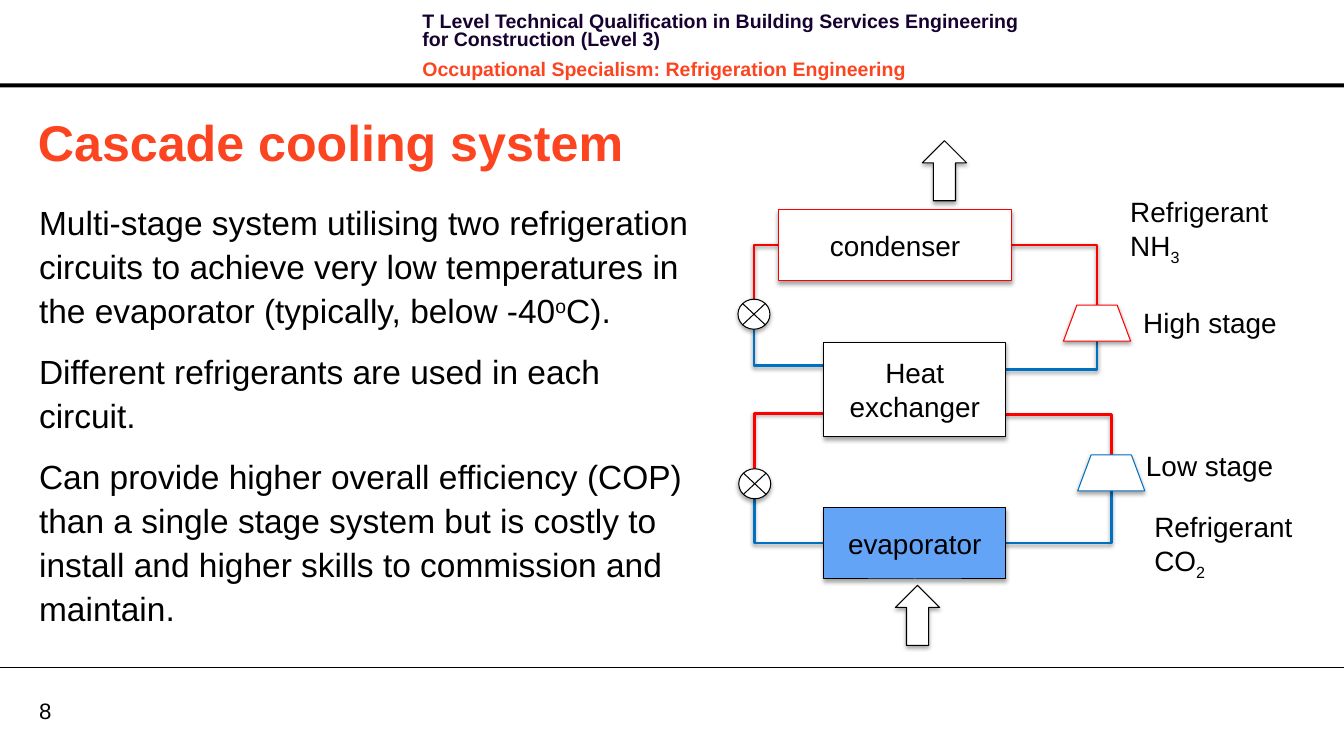
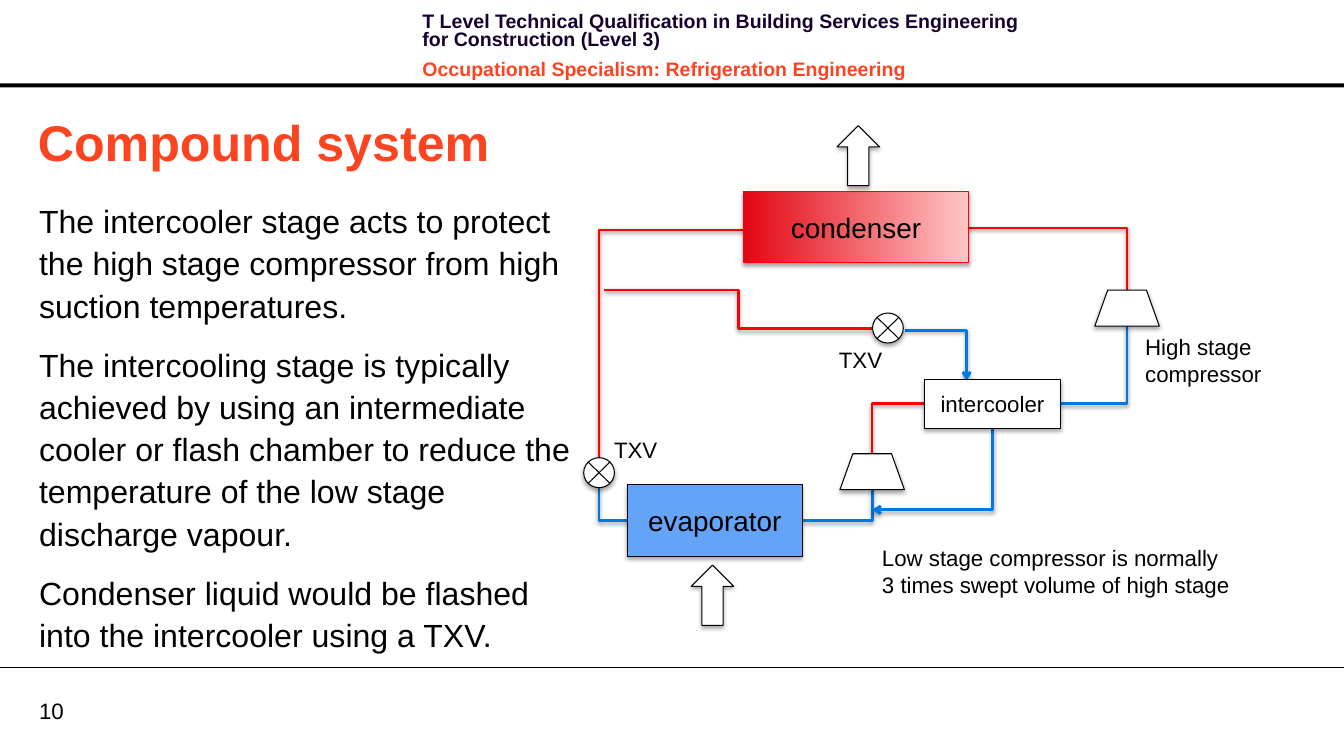
import dataclasses
import typing

import lxml.etree
import pptx
import pptx.dml.color
import pptx.enum.shapes
import pptx.enum.text
import pptx.oxml.ns
import pptx.util

Cm = pptx.util.Cm
Pt = pptx.util.Pt
KIND = pptx.enum.shapes.MSO_SHAPE
LINK = pptx.enum.shapes.MSO_CONNECTOR
MIDDLE = pptx.enum.text.MSO_ANCHOR.MIDDLE
CENTER = pptx.enum.text.PP_ALIGN.CENTER

WIDTH, HEIGHT = 34.01, 19
BLACK, WHITE, NAVY, ORANGE = "000000", "FFFFFF", "170130", "FC4421"
RED, BLUE, AZURE, SKY = "FF0000", "0070C0", "0077E3", "63A4F7"
GLOW = ("E30613", "FFC5C5")
FLUSH = {"margin_left": 0, "margin_right": 0, "margin_top": 0, "margin_bottom": 0}
SIZES = {
    KIND.UP_ARROW: (1.12, 1.52),
    KIND.FLOWCHART_MANUAL_OPERATION: (1.7, 0.91),
    KIND.FLOWCHART_SUMMING_JUNCTION: (0.81, 0.76),
}


class Area(typing.NamedTuple):
    left: float
    top: float
    width: float
    height: float


class Run(typing.NamedTuple):
    text: str
    base: int = 0


class Para(typing.NamedTuple):
    runs: tuple[Run, ...]
    color: str = BLACK


@dataclasses.dataclass
class Box:
    text: str
    area: Area
    fill: tuple[str, ...] = (WHITE,)
    line: str = BLACK
    size: int = 20


@dataclasses.dataclass
class Symbol:
    """A fixed-size sign, placed by its centre line and its top."""
    kind: KIND
    center: float
    top: float
    line: str = BLACK


@dataclasses.dataclass
class Pipe:
    """An elbow that leaves its start sideways."""
    start: tuple[float, float]
    end: tuple[float, float]
    color: str
    head: str = ""
    bends: int = 1


@dataclasses.dataclass
class Label:
    area: Area
    paras: list[Para]
    size: int = 16
    wrap: bool = True


@dataclasses.dataclass
class Page:
    number: int
    title: str
    body: Label
    scale: float
    pipes: list[Pipe]
    boxes: list[Box]
    symbols: list[Symbol]
    labels: list[Label]


def plain(text: str, color: str = BLACK) -> Para:
    return Para((Run(text),), color)


def rgb(code: str) -> pptx.dml.color.RGBColor:
    return pptx.dml.color.RGBColor.from_string(code)


def apply(target, form: dict) -> None:
    for name, value in form.items():
        setattr(target, name, value)


def write(frame, paras: list[Para], font: dict, form: dict, layout: dict) -> None:
    """Fill a text frame; form goes to the frame, layout to each paragraph."""
    apply(frame, {"word_wrap": True} | form)
    for index, para in enumerate(paras):
        line = frame.add_paragraph() if index else frame.paragraphs[0]
        apply(line, layout)
        if not index:
            line.space_before = Pt(0)
        for part in para.runs:
            run = line.add_run()
            run.text = part.text
            apply(run.font, {"name": "Arial"} | font)
            run.font.color.rgb = rgb(para.color)
            if part.base:
                run.font._element.set("baseline", str(part.base * 1000)) if hasattr(
                    run.font, "_element") else run._r.get_or_add_rPr().set(
                    "baseline", str(part.base * 1000))


def add_text(slide, area: Area, paras: list[Para], font: dict,
             form: dict | None = None, layout: dict | None = None) -> None:
    box = slide.shapes.add_textbox(*map(Cm, area))
    write(box.text_frame, paras, font, form or {}, layout or {})


def child(parent, tag: str, **values: str):
    node = lxml.etree.SubElement(parent, pptx.oxml.ns.qn(tag))
    for name, value in values.items():
        node.set(name, value)
    return node


def shade(effects, gap: float, alpha: int) -> None:
    """Put a soft shadow straight below."""
    cast = child(effects, "a:outerShdw", blurRad=str(Pt(3.1)), dist=str(Pt(gap)),
                 dir="5400000", rotWithShape="0")
    child(child(cast, "a:srgbClr", val=BLACK), "a:alpha", val=str(alpha * 1000))


def add_shape(slide, kind: KIND, area: Area, fill: tuple[str, ...], line: str):
    shape = slide.shapes.add_shape(kind, *map(Cm, area))
    if len(fill) == 1:
        shape.fill.solid()
        shape.fill.fore_color.rgb = rgb(fill[0])
    else:
        shape.fill.gradient()
        shape.fill.gradient_angle = 0
        for stop, code in zip(shape.fill.gradient_stops, fill):
            stop.color.rgb = rgb(code)
    shape.line.color.rgb = rgb(line)
    shape.line.width = Pt(0.75)
    shape.shadow.inherit = False
    shade(shape.element.spPr.find(pptx.oxml.ns.qn("a:effectLst")), 1.8, 35)
    return shape


def add_box(slide, box: Box) -> None:
    shape = add_shape(slide, KIND.RECTANGLE, box.area, box.fill, box.line)
    write(shape.text_frame, [plain(box.text)], {"size": Pt(box.size)},
          {"vertical_anchor": MIDDLE}, {"alignment": CENTER})


def add_symbol(slide, sign: Symbol, scale: float) -> None:
    wide, high = SIZES[sign.kind]
    wide *= scale
    area = Area(sign.center - wide / 2, sign.top, wide, high)
    shape = add_shape(slide, sign.kind, area, (WHITE,), sign.line)
    if sign.kind == KIND.FLOWCHART_MANUAL_OPERATION:
        shape.rotation = 180


def add_line(slide, kind: LINK, start: tuple, end: tuple, color: str, width: float):
    """Draw a connector; give it back with its empty effect list."""
    line = slide.shapes.add_connector(kind, *map(Cm, start + end))
    line.line.color.rgb = rgb(color)
    line.line.width = Pt(width)
    return line, child(line.element.spPr, "a:effectLst")


def add_pipe(slide, pipe: Pipe) -> None:
    line, effects = add_line(slide, LINK.ELBOW, pipe.start, pipe.end, pipe.color, 2)
    shade(effects, 1.6, 38)
    props = line.element.spPr
    if pipe.bends == 1:
        props.find(pptx.oxml.ns.qn("a:prstGeom")).set("prst", "bentConnector2")
    if pipe.head:
        child(props.find(pptx.oxml.ns.qn("a:ln")), pipe.head, type="arrow")


def add_frame(slide, page: Page) -> None:
    band = slide.shapes.add_shape(KIND.RECTANGLE, *map(Cm, (0, 2.11, WIDTH, 0.1)))
    band.fill.solid()
    band.fill.fore_color.rgb = rgb(BLACK)
    band.line.fill.background()
    band.shadow.inherit = False
    add_text(slide, Area(10.44, 0.23, 15.7, 1.63), [
        plain("T Level Technical Qualification in Building Services Engineering "
              "for Construction (Level 3)", NAVY),
        plain("Occupational Specialism: Refrigeration Engineering", ORANGE),
    ], {"size": Pt(14), "bold": True}, layout={
        "line_spacing": Pt(13.1), "space_before": Pt(4), "space_after": Pt(4)})
    add_text(slide, Area(0.99, 17.63, 1.63, 0.69), [plain(str(page.number))],
             {"size": Pt(16)}, FLUSH | {"vertical_anchor": MIDDLE})
    add_line(slide, LINK.STRAIGHT, (0, 16.89), (WIDTH, 16.89), BLACK, 0.75)
    add_text(slide, Area(0.71, 2.67, 32.31, 1.8), [plain(page.title, ORANGE)],
             {"size": Pt(36), "bold": True}, {"vertical_anchor": MIDDLE})


def add_page(deck, page: Page) -> None:
    slide = deck.slides.add_slide(deck.slide_layouts[6])
    add_frame(slide, page)
    for pipe in page.pipes:
        add_pipe(slide, pipe)
    for box in page.boxes:
        add_box(slide, box)
    for sign in page.symbols:
        add_symbol(slide, sign, page.scale)
    for label in page.labels:
        add_text(slide, label.area, label.paras, {"size": Pt(label.size)},
                 {"word_wrap": label.wrap})
    add_text(slide, page.body.area, page.body.paras, {"size": Pt(page.body.size)},
             FLUSH, {"line_spacing": 1.1, "space_after": Pt(12)})


ARROW, PRESS, VALVE = SIZES

CASCADE = Page(
    8, "Cascade cooling system",
    Label(Area(0.99, 5, 16.81, 12.42), [
        Para((Run("Multi-stage system utilising two refrigeration circuits to achieve "
                  "very low temperatures in the evaporator (typically, below -40"),
              Run("o", 30), Run("C)."))),
        plain("Different refrigerants are used in each circuit."),
        plain("Can provide higher overall efficiency (COP) than a single stage system "
              "but is costly to install and higher skills to commission and maintain."),
    ], 24), 1,
    [Pipe((19.69, 6.2), (19.08, 7.57), RED),
     Pipe((25.6, 6.2), (27.76, 7.72), RED),
     Pipe((25.45, 9.35), (27.76, 8.64), BLUE),
     Pipe((20.85, 9.25), (19.08, 8.33), BLUE),
     Pipe((20.85, 10.46), (19.1, 11.86), RED),
     Pipe((25.45, 10.49), (28.12, 11.51), RED),
     Pipe((25.45, 13.74), (28.12, 12.42), BLUE),
     Pipe((20.85, 13.74), (19.1, 12.62), BLUE)],
    [Box("condenser", Area(19.69, 5.31, 5.92, 1.8), line=RED),
     Box("Heat exchanger", Area(20.85, 8.66, 4.6, 2.39)),
     Box("evaporator", Area(20.85, 12.85, 4.6, 1.8), (SKY,))],
    [Symbol(ARROW, 23.22, 14.81), Symbol(ARROW, 23.9, 3.56),
     Symbol(PRESS, 27.76, 7.72, RED), Symbol(PRESS, 28.12, 11.51, BLUE),
     Symbol(VALVE, 19.08, 7.57), Symbol(VALVE, 19.1, 11.86)],
    [Label(Area(28.75, 11.23, 3.76, 1.12), [plain("Low stage")], 20, False),
     Label(Area(28.68, 7.62, 3.91, 1.12), [plain("High stage")], 20, False),
     Label(Area(28.96, 12.78, 4.04, 1.96),
           [plain("Refrigerant"), Para((Run("CO"), Run("2", -25)))], 20, False),
     Label(Area(28.35, 4.8, 4.04, 1.96),
           [plain("Refrigerant"), Para((Run("NH"), Run("3", -25)))], 20, False)],
)

COMPOUND = Page(
    10, "Compound system",
    Label(Area(0.99, 5, 13.94, 11.58), [
        plain("The intercooler stage acts to protect the high stage compressor from "
              "high suction temperatures."),
        plain("The intercooling stage is typically achieved by using an intermediate "
              "cooler or flash chamber to reduce the temperature of the low stage "
              "discharge vapour."),
        plain("Condenser liquid would be flashed into the intercooler using a TXV."),
    ], 23), 0.96,
    [Pipe((18.85, 5.82), (15.16, 11.58), RED),
     Pipe((24.51, 5.77), (28.52, 7.34), RED),
     Pipe((23.39, 10.21), (22.07, 11.48), RED),
     Pipe((20.29, 13.18), (22.07, 12.4), AZURE),
     Pipe((15.88, 13.18), (15.16, 12.32), AZURE),
     Pipe((26.85, 10.21), (28.52, 8.26), AZURE),
     Pipe((22.91, 8.36), (24.46, 9.63), AZURE, "a:tailEnd"),
     Pipe((22.07, 12.9), (25.12, 10.85), AZURE, "a:headEnd"),
     Pipe((22.07, 8.31), (15.29, 7.34), RED, bends=2)],
    [Box("condenser", Area(18.82, 4.85, 5.69, 1.8), GLOW, RED),
     Box("intercooler", Area(23.39, 9.6, 3.45, 1.24), size=16),
     Box("evaporator", Area(15.88, 12.27, 4.42, 1.8), (SKY,))],
    [Symbol(ARROW, 18.03, 14.3), Symbol(ARROW, 21.72, 3.18),
     Symbol(PRESS, 28.52, 7.34), Symbol(PRESS, 22.07, 11.48),
     Symbol(VALVE, 15.16, 11.58), Symbol(VALVE, 22.47, 7.92)],
    [Label(Area(22.07, 13.64, 10.13, 1.63),
           [plain("Low stage compressor is normally"),
            plain("3 times swept volume of high stage")]),
     Label(Area(28.73, 8.31, 4.57, 1.63), [plain("High stage compressor")]),
     Label(Area(20.98, 8.64, 1.83, 0.94), [plain("TXV")]),
     Label(Area(15.29, 10.9, 1.83, 0.94), [plain("TXV")])],
)


def main() -> None:
    deck = pptx.Presentation()
    apply(deck, {"slide_width": Cm(WIDTH), "slide_height": Cm(HEIGHT)})
    for page in (CASCADE, COMPOUND):
        add_page(deck, page)
    deck.save("out.pptx")


if __name__ == "__main__":
    main()
